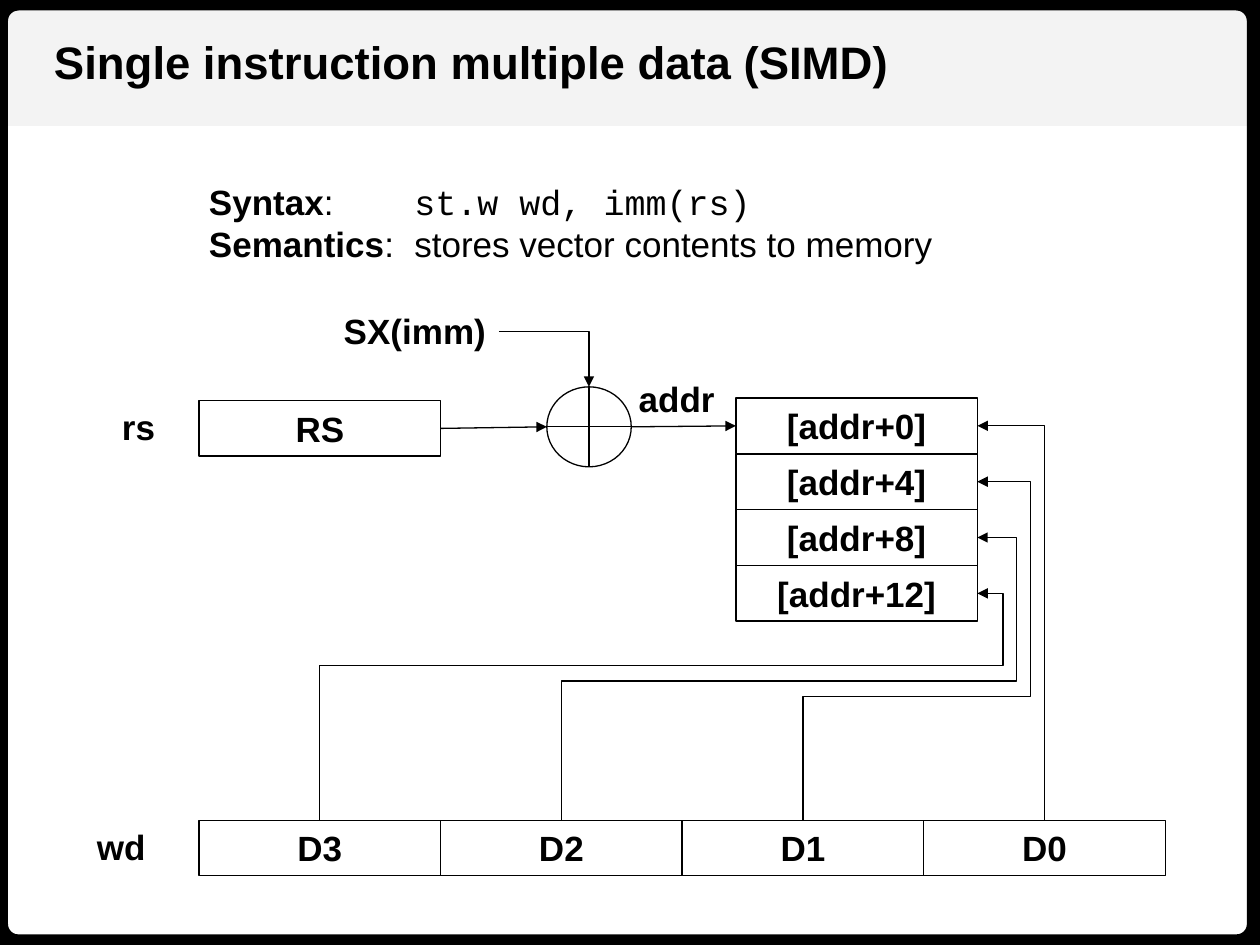
from pptx import Presentation
from pptx.dml.color import RGBColor
from pptx.enum.shapes import MSO_CONNECTOR, MSO_SHAPE
from pptx.enum.text import MSO_ANCHOR, MSO_AUTO_SIZE, PP_ALIGN
from pptx.oxml.ns import qn
from pptx.util import Inches, Pt
from lxml.etree import SubElement

BLACK = RGBColor(0, 0, 0)
PALE = RGBColor(0xF3, 0xF3, 0xF3)
COLS, ROWS = 100, 75
SANS, MONO = "Arial", "Courier New"


def write(para, text, size=20, bold=True, font=SANS):
    run = para.add_run()
    run.text = text
    run.font.name, run.font.size, run.font.bold = font, Pt(size), bold
    run.font.color.rgb = BLACK


class Board:
    """Holds the style and the current slide; lengths are grid columns and rows."""

    def __init__(self, deck, line=0.75):
        self.shapes = deck.slides.add_slide(deck.slide_layouts[6]).shapes
        self.col, self.row = deck.slide_width / COLS, deck.slide_height / ROWS
        self.line = line

    def scale(self, x, y, *rest):
        units = (self.col, self.row) * 2
        return [round(n * unit) for n, unit in zip((x, y, *rest), units)]

    def shape(self, kind, *place, fill=None, line=None):
        """Draw a preset shape; a line width of 0 means no outline."""
        shape = self.shapes.add_shape(kind, *self.scale(*place))
        shape.shadow.inherit = False
        if fill is None:
            shape.fill.background()
        else:
            shape.fill.solid()
            shape.fill.fore_color.rgb = fill
        if line == 0:
            shape.line.fill.background()
        else:
            shape.line.color.rgb = BLACK
            shape.line.width = Pt(line or self.line)
        return shape

    def cell(self, text, x, y, w, h):
        cell = self.shape(MSO_SHAPE.RECTANGLE, x, y, w, h)
        frame = cell.text_frame
        frame.vertical_anchor = MSO_ANCHOR.MIDDLE
        frame.paragraphs[0].alignment = PP_ALIGN.CENTER
        write(frame.paragraphs[0], text)
        return cell

    def label(self, text, *place, **form):
        frame = self.shapes.add_textbox(*self.scale(*place)).text_frame
        frame.word_wrap = False
        frame.auto_size = MSO_AUTO_SIZE.SHAPE_TO_FIT_TEXT
        if text:
            write(frame.paragraphs[0], text, **form)
        return frame

    def wire(self, start, stop, kind=MSO_CONNECTOR.STRAIGHT, tip=None):
        """Draw a connector; tip is headEnd (arrow at start) or tailEnd."""
        wire = self.shapes.add_connector(kind, *self.scale(*start, *stop))
        wire.line.color.rgb, wire.line.width = BLACK, Pt(self.line)
        props = wire._element.spPr
        if tip:
            SubElement(props.find(qn("a:ln")), qn("a:" + tip), type="triangle")
        SubElement(props, qn("a:effectLst"))
        return wire

    def bend(self, start, stop, tip, lane=None, turn=None):
        """Elbow wire: one corner, or three by way of column lane and row turn."""
        wire = self.wire(start, stop, MSO_CONNECTOR.ELBOW, tip)
        geom = wire._element.spPr.find(qn("a:prstGeom"))
        geom.set("prst", "bentConnector2" if turn is None else "bentConnector4")
        if turn is not None:
            guides = geom.find(qn("a:avLst"))
            for num, (mid, a, b) in enumerate(zip((lane, turn), start, stop), 1):
                share = round((mid - a) / (b - a) * 100000)
                SubElement(guides, qn("a:gd"), name=f"adj{num}", fmla=f"val {share}")


def explain(board):
    frame = board.label("", 15.6, 13.8, 59.8, 7.7)
    lines = [("Syntax", "st.w wd, imm(rs)", MONO),
             ("Semantics", "stores vector contents to memory", SANS)]
    for num, (term, text, font) in enumerate(lines):
        para = frame.add_paragraph() if num else frame.paragraphs[0]
        stops = SubElement(para._p.get_or_add_pPr(), qn("a:tabLst"))
        SubElement(stops, qn("a:tab"), pos=str(Inches(1.63)), algn="l")
        write(para, term)
        write(para, ":\t", bold=False)
        write(para, text, bold=False, font=font)


def adder(board, source, target):
    left, top, wide, high = 43.4, 30.7, 6.7, 6.35
    right, base = left + wide, top + high
    mid, axis = left + wide / 2, top + high / 2
    board.shape(MSO_SHAPE.OVAL, left, top, wide, high)
    board.wire((mid, top), (mid, base))
    board.wire((left, axis), (right, axis))
    board.wire((35, axis), (left, axis), tip="tailEnd").begin_connect(source, 3)
    board.wire((right, axis), (58.4, axis), tip="tailEnd").end_connect(target, 1)
    board.bend((39.6, 26.3), (mid, top), "tailEnd")


def main():
    deck = Presentation()
    deck.slide_width, deck.slide_height = Inches(10), Inches(7.5)
    board = Board(deck)
    board.shape(MSO_SHAPE.RECTANGLE, 0, 0, COLS, 10, fill=PALE, line=0)
    edge = board.shape(MSO_SHAPE.ROUNDED_RECTANGLE, -0.2, 0, COLS, ROWS, line=12)
    edge.adjustments[0] = 0.022
    board.label("Single instruction multiple data (SIMD)", 3.3, 2.2, 68.9, 5.4, size=26)
    explain(board)

    left, wide, high = 15.8, 19.17, 4.4
    base, stack, pitch = 65.1, 58.4, 4.43
    source = board.cell("RS", left, 31.8, wide, high)
    slots = []
    for num in range(4):
        top = 31.6 + num * pitch
        slots.append(board.cell(f"[addr+{4 * num}]", stack, top, wide, high))
        x = left + (3 - num) * wide
        board.cell(f"D{num}", x, base, wide, high)
        lane, turn = 82.9 - 1.1 * num, 56.55 - 1.25 * num
        board.bend((stack + wide, top + high / 2), (x + wide / 2, base), "headEnd",
                   lane, turn if num else None)
    adder(board, source, slots[0])

    for text, x, y, w in [("rs", 8.7, 31.7, 4.7), ("wd", 6.7, 65, 5.9),
                          ("SX(imm)", 26.3, 24.1, 13.4), ("addr", 49.7, 29.5, 8.1)]:
        board.label(text, x, y, w, high)
    deck.save("out.pptx")


if __name__ == "__main__":
    main()
